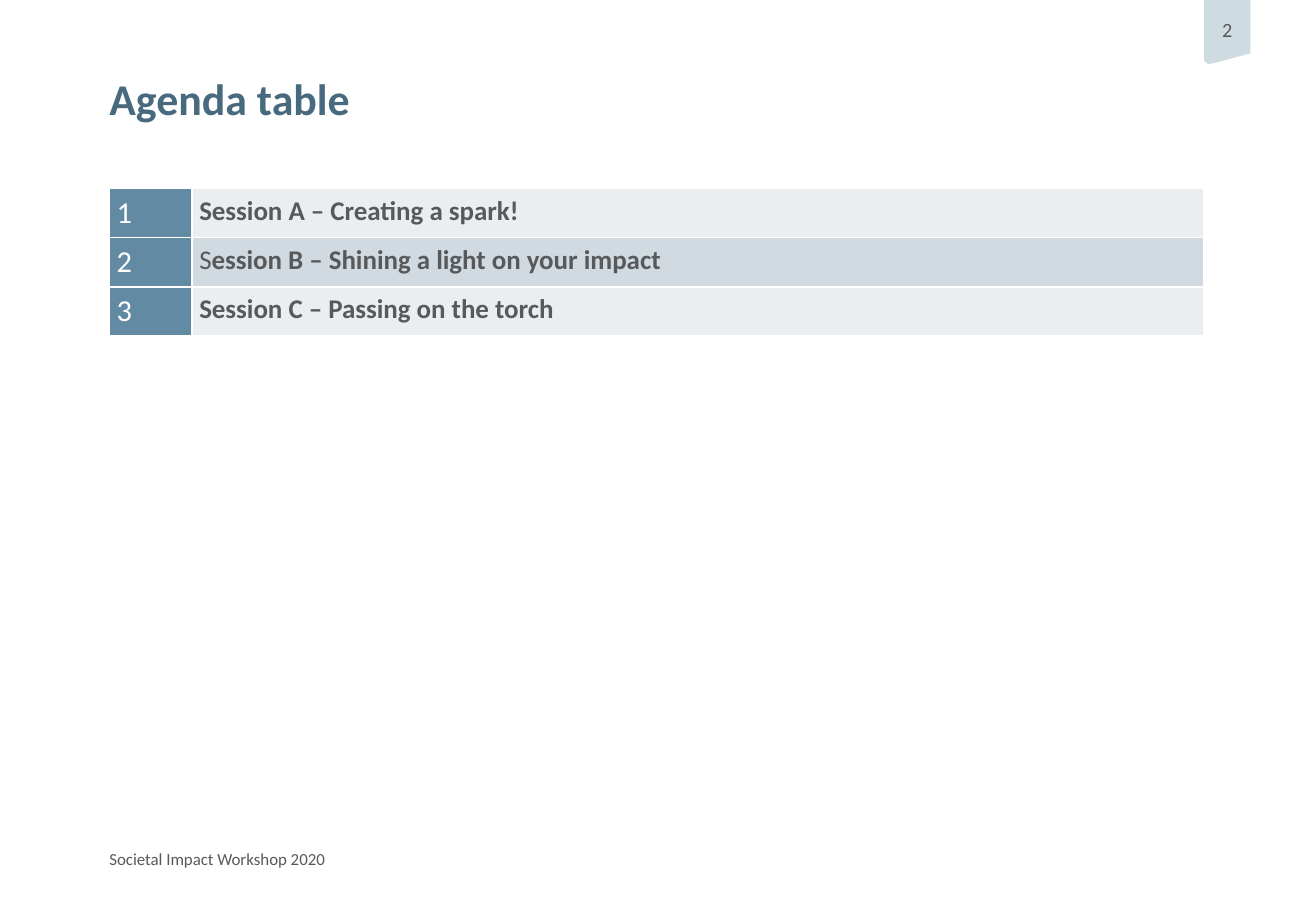
import pptx
import pptx.util
import pptx.dml.color
import pptx.enum.text
import pptx.oxml
import pptx.oxml.ns
from pptx.util import Inches

TITLE = "Agenda table"
FOOTER = "Societal Impact Workshop 2020"
PAGE = "2"
# Each session is a list of (text, bold) runs.
SESSIONS = [
    [("Session A – Creating a spark!", True)],
    [("S", False), ("ession B – Shining a light on your impact", True)],
    [("Session C – Passing on the torch", True)],
]
FONT = "Calibri"
GREY, NAVY, STEEL, WHITE = "58595B", "486A7E", "628BA3", "FFFFFF"
BANDS = ["EAEEF0", "D1DAE0"]
FLAG = [(9.91, 0), (10.29, 0), (10.29, 0.44), (9.95, 0.53), (9.93, 0.52), (9.91, 0.5)]
LEFT, WIDTH = 0.9, 9.01
NUM_W, ROW_H = 0.68, 0.4


def color(code):
    return pptx.dml.color.RGBColor.from_string(code)


def write(para, text, size, code, bold=False):
    run = para.add_run()
    run.text = text
    font = run.font
    font.name, font.size, font.bold = FONT, pptx.util.Pt(size), bold
    font.color.rgb = color(code)


def inset(item, left, top, right, bottom):
    item.margin_left, item.margin_top = Inches(left), Inches(top)
    item.margin_right, item.margin_bottom = Inches(right), Inches(bottom)


def place(shape, left, top, width, height):
    shape.left, shape.top = Inches(left), Inches(top)
    shape.width, shape.height = Inches(width), Inches(height)


def border(cell):
    """Draw thin white lines on all four sides; call before the fill is set."""
    props = cell._tc.get_or_add_tcPr()
    for side in "LRTB":
        props.append(pptx.oxml.parse_xml(
            f'<a:ln{side} {pptx.oxml.ns.nsdecls("a")} w="12192"><a:solidFill>'
            f'<a:srgbClr val="{WHITE}"/></a:solidFill></a:ln{side}>'))


def style(cell, fill):
    border(cell)
    cell.fill.solid()
    cell.fill.fore_color.rgb = color(fill)
    inset(cell, 0.06, 0.05, 0.06, 0.05)


deck = pptx.Presentation()
deck.slide_width, deck.slide_height = Inches(10.83), Inches(7.5)
slide = deck.slides.add_slide(deck.slide_layouts[5])
shapes = slide.shapes

# Page flag
pen = shapes.build_freeform(Inches(FLAG[0][0]), Inches(FLAG[0][1]))
pen.add_line_segments([(Inches(x), Inches(y)) for x, y in FLAG[1:]], close=True)
flag = pen.convert_to_shape()
flag.shadow.inherit = False
flag.fill.solid()
flag.fill.fore_color.rgb = color("CEDBE0")
flag.line.fill.background()
frame = flag.text_frame
inset(frame, 0, 0, 0, 0.04)
frame.vertical_anchor = pptx.enum.text.MSO_ANCHOR.MIDDLE
frame.paragraphs[0].alignment = pptx.enum.text.PP_ALIGN.CENTER
write(frame.paragraphs[0], PAGE, 12, GREY)

# Title and footer
foot = shapes.add_textbox(0, 0, 0, 0)
place(foot, LEFT, 6.99, 2.29, 0.24)
place(shapes.title, LEFT, 0.59, WIDTH, 0.4)
for shape, text, size, code, bold in [
    (shapes.title, TITLE, 26, NAVY, True),
    (foot, FOOTER, 10, GREY, False),
]:
    frame = shape.text_frame
    frame.word_wrap = True
    frame.auto_size = pptx.enum.text.MSO_AUTO_SIZE.NONE
    frame.vertical_anchor = pptx.enum.text.MSO_ANCHOR.TOP
    inset(frame, 0, 0, 0, 0)
    frame.paragraphs[0].alignment = pptx.enum.text.PP_ALIGN.LEFT
    write(frame.paragraphs[0], text, size, code, bold)

# Agenda
count = len(SESSIONS)
table = shapes.add_table(count, 2, Inches(LEFT), Inches(1.55),
                         Inches(WIDTH), Inches(ROW_H * count)).table
table.first_row = table.horz_banding = False
table.columns[0].width = Inches(NUM_W)
table.columns[1].width = Inches(WIDTH - NUM_W)
for i, runs in enumerate(SESSIONS):
    table.rows[i].height = Inches(ROW_H)
    num, name = table.cell(i, 0), table.cell(i, 1)
    style(num, STEEL)
    style(name, BANDS[i % 2])
    write(num.text_frame.paragraphs[0], str(i + 1), 18, WHITE)
    for text, bold in runs:
        write(name.text_frame.paragraphs[0], text, 16, GREY, bold)

deck.save("out.pptx")
